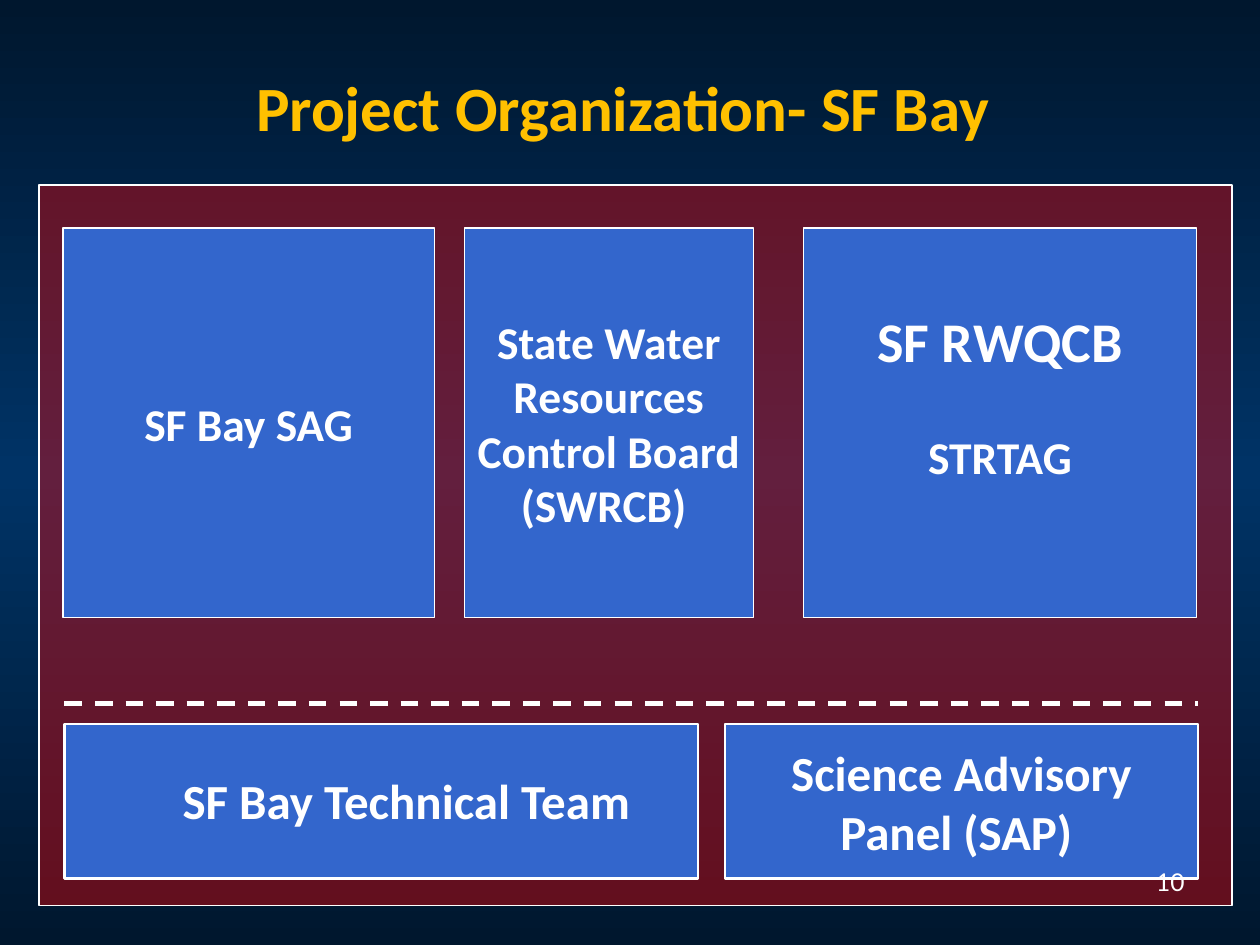
from copy import deepcopy
from dataclasses import dataclass

from lxml import etree
from pptx import Presentation
from pptx.dml.color import RGBColor
from pptx.enum.dml import MSO_LINE
from pptx.enum.shapes import MSO_CONNECTOR, MSO_SHAPE
from pptx.enum.text import MSO_ANCHOR, PP_ALIGN
from pptx.oxml.ns import qn
from pptx.util import Cm, Pt

RECTANGLE = MSO_SHAPE.RECTANGLE
STRAIGHT = MSO_CONNECTOR.STRAIGHT
DASH = MSO_LINE.DASH
LEFT, CENTER, RIGHT = PP_ALIGN.LEFT, PP_ALIGN.CENTER, PP_ALIGN.RIGHT
TOP, MIDDLE = MSO_ANCHOR.TOP, MSO_ANCHOR.MIDDLE

COLORS = {
    "edge": "00172E",
    "center": "003366",
    "panel": "FF0000",
    "box": "3366CC",
    "white": "FFFFFF",
    "title": "FFC000",
}


@dataclass
class Area:
    """Position and size in centimetres."""
    left: float
    top: float
    width: float
    height: float

    def lengths(self) -> tuple:
        return Cm(self.left), Cm(self.top), Cm(self.width), Cm(self.height)


@dataclass
class Caption:
    text: str
    area: Area


def color(name: str) -> RGBColor:
    return RGBColor.from_string(COLORS[name])


def write(frame, text: str, *, size: float, font: str = "Calibri", ink: str = "white",
          bold: bool = True, align=CENTER, anchor=MIDDLE, wrap: bool = True,
          inset: float | None = None, gap: float = 0, first: bool = True) -> None:
    """Write one paragraph; later paragraphs of a frame use first=False."""
    frame.word_wrap = wrap
    frame.vertical_anchor = anchor
    if inset is not None:
        frame.margin_left = frame.margin_right = Cm(inset)
        frame.margin_top = frame.margin_bottom = Cm(inset)
    para = frame.paragraphs[0] if first else frame.add_paragraph()
    para.alignment = align
    para.space_before = Pt(gap)
    span = para.add_run()
    span.text = text
    span.font.name = font
    span.font.size = Pt(size)
    span.font.bold = bold
    span.font.color.rgb = color(ink)


def add_box(page, area: Area, fill: str = "box", line_width: float = 0.75):
    box = page.shapes.add_shape(RECTANGLE, *area.lengths())
    box.shadow.inherit = False
    box.fill.solid()
    box.fill.fore_color.rgb = color(fill)
    box.line.color.rgb = color("white")
    box.line.width = Pt(line_width)
    return box


def add_text(page, caption: Caption, **style) -> None:
    box = page.shapes.add_textbox(*caption.area.lengths())
    write(box.text_frame, caption.text, **style)


def paint_background(page) -> None:
    """Vertical gradient, dark at both ends."""
    fill = page.background.fill
    fill.gradient()
    fill.gradient_angle = 90
    start = page.element.xpath(".//p:bg//a:gs")[0]
    start.addnext(deepcopy(start))
    for stop, name, position in zip(fill.gradient_stops, ("edge", "center", "edge"), (0, 0.5, 1)):
        stop.color.rgb = color(name)
        stop.position = position


def add_panel(page) -> None:
    panel = add_box(page, Area(0.79, 3.73, 24.05, 14.53), "panel")
    tint = panel.element.spPr.find(qn("a:solidFill"))[0]
    etree.SubElement(tint, qn("a:alpha"), val="39000")


def add_divider(page) -> None:
    divider = page.shapes.add_connector(STRAIGHT, Cm(1.3), Cm(14.18), Cm(24.16), Cm(14.18))
    divider.line.color.rgb = color("white")
    divider.line.width = Pt(2.5)
    divider.line.dash_style = DASH
    etree.SubElement(divider.element.spPr, qn("a:effectLst"))


def main() -> None:
    deck = Presentation()
    deck.slide_width, deck.slide_height = Cm(25.4), Cm(19.05)
    page = deck.slides.add_slide(deck.slide_layouts[6])
    paint_background(page)
    add_panel(page)

    # Title
    add_text(page, Caption("Project Organization- SF Bay ", Area(1.27, 0.56, 22.86, 3.18)),
             size=36, ink="title")

    # Upper row: agencies and stakeholders
    row_top, row_height = 4.6, 7.85
    for text, left, width in (
        ("State Water Resources Control Board (SWRCB) ", 9.36, 5.83),
        ("SF Bay SAG", 1.27, 7.49),
    ):
        box = add_box(page, Area(left, row_top, width, row_height))
        write(box.text_frame, text, size=26)

    board = add_box(page, Area(16.2, row_top, 7.92, row_height)).text_frame
    write(board, "SF RWQCB", size=32)
    write(board, "STRTAG", size=26, gap=32, first=False)
    board.margin_bottom = Cm(1.25)

    # Lower row: technical team and science panel
    for left, width in ((1.3, 12.78), (14.61, 9.55)):
        add_box(page, Area(left, 14.59, width, 3.12), line_width=1.25)
    for caption in (
        Caption("SF Bay Technical Team", Area(3.68, 15.54, 9.14, 1.2)),
        Caption("Science Advisory", Area(15.95, 14.96, 7.54, 1.2)),
        Caption("Panel (SAP)", Area(16.94, 16.15, 4.72, 1.2)),
    ):
        add_text(page, caption, size=28, align=LEFT, anchor=TOP, wrap=False, inset=0)
    add_divider(page)

    # Page number
    add_text(page, Caption("10", Area(18.21, 17.35, 5.92, 1.32)),
             size=14, font="Lato", bold=False, align=RIGHT, anchor=TOP)

    deck.save("out.pptx")


if __name__ == "__main__":
    main()
